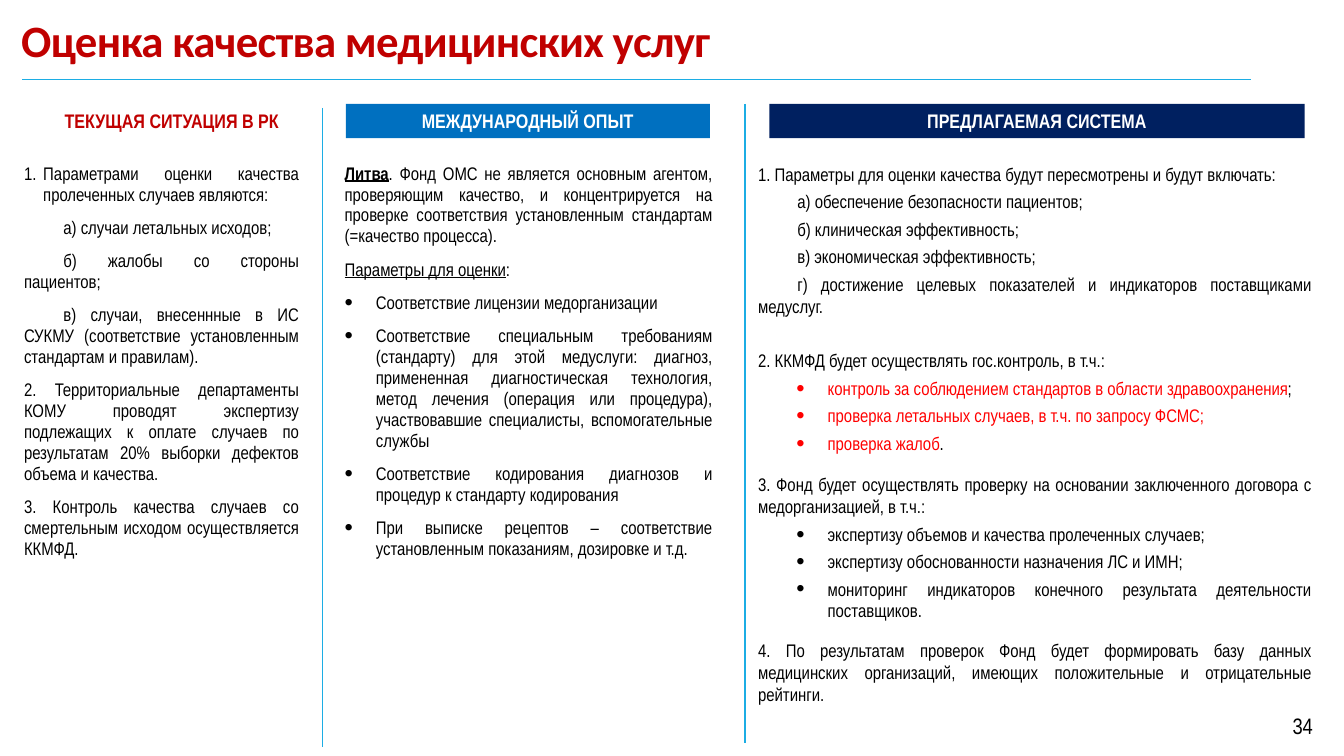
from dataclasses import dataclass

from lxml import etree
from pptx import Presentation
from pptx.dml.color import RGBColor
from pptx.enum.dml import MSO_LINE
from pptx.enum.shapes import MSO_CONNECTOR, MSO_SHAPE
from pptx.enum.text import MSO_ANCHOR, MSO_AUTO_SIZE, PP_ALIGN
from pptx.oxml.ns import qn
from pptx.util import Inches, Pt

RECTANGLE = MSO_SHAPE.RECTANGLE
STRAIGHT = MSO_CONNECTOR.STRAIGHT
DASH = MSO_LINE.DASH
TOP, MIDDLE = MSO_ANCHOR.TOP, MSO_ANCHOR.MIDDLE
LEFT, CENTER, RIGHT, JUSTIFY = PP_ALIGN.LEFT, PP_ALIGN.CENTER, PP_ALIGN.RIGHT, PP_ALIGN.JUSTIFY
NO_FIT, GROW = MSO_AUTO_SIZE.NONE, MSO_AUTO_SIZE.SHAPE_TO_FIT_TEXT


@dataclass(frozen=True)
class Theme:
    title_font: str = "Calibri"
    font: str = "Arial Narrow"
    title_size: int = 32
    number_size: int = 16
    header_size: int = 14
    body_size: int = 13
    black: str = "000000"
    white: str = "FFFFFF"
    dark_red: str = "C00000"
    red: str = "FF0000"
    blue: str = "0070C0"
    navy: str = "002060"
    rule: str = "1CADE4"


@dataclass(frozen=True)
class Level:
    """Left margin and first-line indent in inches, with the list marker."""
    margin: float = 0
    indent: float = 0
    marker: str = ""


@dataclass(frozen=True)
class Spacing:
    """Paragraph spacing in points; line is a multiple."""
    line: float
    before: float
    after: float


THEME = Theme()
PLAIN = Level()
SUB = Level(0, 0.39)
NUMBERED = Level(0.19, -0.19, "number")
BULLET = Level(0.31, -0.31, "bullet")
SUB_BULLET = Level(0.69, -0.31, "bullet")
TIGHT = Spacing(0.96, 2.6, 6)
LOOSE = Spacing(1, 0, 4)
RED = {"color": THEME.red}

# Each paragraph: level, extra space before in points, runs of (text, style)
CURRENT = [
    (NUMBERED, 0, [("Параметрами оценки качества пролеченных случаев являются:", {})]),
    (SUB, 0, [("а) случаи летальных исходов;", {})]),
    (SUB, 0, [("б) жалобы со стороны пациентов;", {})]),
    (SUB, 0, [("в) случаи, внесеннные в ИС СУКМУ (соответствие установленным стандартам "
               "и правилам).", {})]),
    (PLAIN, 0, [("2. Территориальные департаменты КОМУ проводят экспертизу подлежащих к оплате "
                 "случаев по результатам 20% выборки дефектов объема и качества.", {})]),
    (PLAIN, 0, [("3. Контроль качества случаев со смертельным исходом осуществляется ККМФД.", {})]),
]
INTERNATIONAL = [
    (PLAIN, 0, [("Литва", {"bold": True, "underline": True}),
                (". Фонд ОМС не является основным агентом, проверяющим качество, и "
                 "концентрируется на проверке соответствия установленным стандартам "
                 "(=качество процесса).", {})]),
    (PLAIN, 0, [("Параметры для оценки", {"underline": True}), (":", {})]),
    (BULLET, 0, [("Соответствие лицензии медорганизации", {})]),
    (BULLET, 0, [("Соответствие специальным требованиям (стандарту) для этой медуслуги: диагноз, "
                  "примененная диагностическая технология, метод лечения (операция или процедура), "
                  "участвовавшие специалисты, вспомогательные службы", {})]),
    (BULLET, 0, [("Соответствие кодирования диагнозов и процедур к стандарту кодирования", {})]),
    (BULLET, 0, [("При выписке рецептов – соответствие установленным показаниям, дозировке "
                  "и т.д.", {})]),
]
PROPOSED = [
    (PLAIN, 0, [("1. Параметры для оценки качества будут пересмотрены и будут включать:", {})]),
    (SUB, 0, [("а) обеспечение безопасности пациентов;", {})]),
    (SUB, 0, [("б) клиническая эффективность;", {})]),
    (SUB, 0, [("в) экономическая эффективность;", {})]),
    (SUB, 0, [("г) достижение целевых показателей и индикаторов поставщиками медуслуг.", {})]),
    (PLAIN, 19.5, [("2. ККМФД будет осуществлять гос.контроль, в т.ч.:", {})]),
    (SUB_BULLET, 0, [("контроль за соблюдением стандартов в области здравоохранения", RED),
                     (";", {})]),
    (SUB_BULLET, 0, [("проверка летальных случаев, в т.ч. по запросу ФСМС;", RED)]),
    (SUB_BULLET, 0, [("проверка жалоб", RED), (".", {})]),
    (PLAIN, 10, [("3. Фонд будет осуществлять проверку на основании заключенного договора с "
                  "медорганизацией, в т.ч.:", {})]),
    (SUB_BULLET, 0, [("экспертизу объемов и качества пролеченных случаев;", {})]),
    (SUB_BULLET, 0, [("экспертизу обоснованности назначения ЛС и ИМН;", {})]),
    (SUB_BULLET, 0, [("мониторинг индикаторов конечного результата деятельности "
                      "поставщиков.", {})]),
    (PLAIN, 9, [("4. По результатам проверок Фонд будет формировать базу данных медицинских "
                 "организаций, имеющих положительные и отрицательные рейтинги.", {})]),
]


def add_span(para, text, size, color=THEME.black, bold=False, underline=False, font=THEME.font):
    span = para.add_run()
    span.text = text
    span.font.name = font
    span.font.size = Pt(size)
    span.font.bold = bold
    span.font.underline = underline
    span.font.color.rgb = RGBColor.from_string(color)
    return span


def apply_level(para, level):
    properties = para._p.get_or_add_pPr()
    properties.set("marL", str(Inches(level.margin)))
    properties.set("indent", str(Inches(level.indent)))
    if level.marker == "bullet":
        etree.SubElement(properties, qn("a:buSzPct")).set("val", "130000")
        etree.SubElement(properties, qn("a:buFont")).set("typeface", "Arial")
        etree.SubElement(properties, qn("a:buChar")).set("char", "•")
    elif level.marker == "number":
        etree.SubElement(properties, qn("a:buAutoNum")).set("type", "arabicPeriod")


def add_rectangle(slide, left, top, width, height, anchor):
    box = slide.shapes.add_shape(RECTANGLE, Inches(left), Inches(top), Inches(width), Inches(height))
    box.shadow.inherit = False
    box.text_frame.word_wrap = True
    box.text_frame.vertical_anchor = anchor
    return box


def add_title(slide, text):
    title = slide.shapes.title
    title.left, title.top, title.width, title.height = (
        Inches(0), Inches(0.14), Inches(13.29), Inches(0.63))
    frame = title.text_frame
    frame.auto_size = NO_FIT
    frame.vertical_anchor = MIDDLE
    frame.margin_left = Inches(0.21)
    para = frame.paragraphs[0]
    para.alignment = LEFT
    para.line_spacing = 0.75
    span = add_span(para, text, THEME.title_size, THEME.dark_red, True, font=THEME.title_font)
    span.font._element.set("spc", "-50")


def add_header(slide, left, width, text, fill, color):
    box = add_rectangle(slide, left, 1.03, width, 0.34, MIDDLE)
    box.fill.solid()
    box.fill.fore_color.rgb = RGBColor.from_string(fill)
    box.line.fill.background()
    box.text_frame.auto_size = GROW
    para = box.text_frame.paragraphs[0]
    para.alignment = CENTER
    add_span(para, text, THEME.header_size, color, True)


def add_column(slide, left, width, content, spacing):
    box = add_rectangle(slide, left, 1.57, width, 5.79, TOP)
    box.fill.background()
    box.line.color.rgb = RGBColor.from_string(THEME.white)
    box.line.width = Pt(0.75)
    box.line.dash_style = DASH
    frame = box.text_frame
    for index, (level, extra, spans) in enumerate(content):
        para = frame.add_paragraph() if index else frame.paragraphs[0]
        para.alignment = JUSTIFY
        para.line_spacing = spacing.line
        para.space_before = Pt(spacing.before + extra)
        para.space_after = Pt(spacing.after)
        apply_level(para, level)
        for text, style in spans:
            add_span(para, text, THEME.body_size, **style)


def add_rule(slide, x1, y1, x2, y2):
    rule = slide.shapes.add_connector(STRAIGHT, Inches(x1), Inches(y1), Inches(x2), Inches(y2))
    rule.line.color.rgb = RGBColor.from_string(THEME.rule)
    rule.line.width = Pt(1)
    etree.SubElement(rule._element.spPr, qn("a:effectLst"))


def add_page_number(slide, number):
    box = slide.shapes.add_textbox(Inches(11.69), Inches(7), Inches(1.43), Inches(0.4))
    box.text_frame.word_wrap = True
    box.text_frame.vertical_anchor = MIDDLE
    para = box.text_frame.paragraphs[0]
    para.alignment = RIGHT
    add_span(para, number, THEME.number_size)


def main():
    deck = Presentation()
    deck.slide_width, deck.slide_height = Inches(13.33), Inches(7.5)
    slide = deck.slides.add_slide(deck.slide_layouts.get_by_name("Title Only"))
    add_title(slide, "Оценка качества медицинских услуг")
    add_header(slide, 0.22, 2.97, "ТЕКУЩАЯ СИТУАЦИЯ В РК", THEME.white, THEME.dark_red)
    add_header(slide, 3.43, 3.61, "МЕЖДУНАРОДНЫЙ ОПЫТ", THEME.blue, THEME.white)
    add_header(slide, 7.63, 5.31, "ПРЕДЛАГАЕМАЯ СИСТЕМА", THEME.navy, THEME.white)
    add_column(slide, 0.14, 2.92, CURRENT, TIGHT)
    add_column(slide, 3.32, 3.84, INTERNATIONAL, TIGHT)
    add_column(slide, 7.42, 5.68, PROPOSED, LOOSE)
    add_rule(slide, 0.22, 0.79, 12.41, 0.79)
    add_rule(slide, 3.2, 1.07, 3.2, 7.41)
    add_rule(slide, 7.39, 1.03, 7.39, 7.37)
    add_page_number(slide, "34")
    deck.save("out.pptx")


if __name__ == "__main__":
    main()
